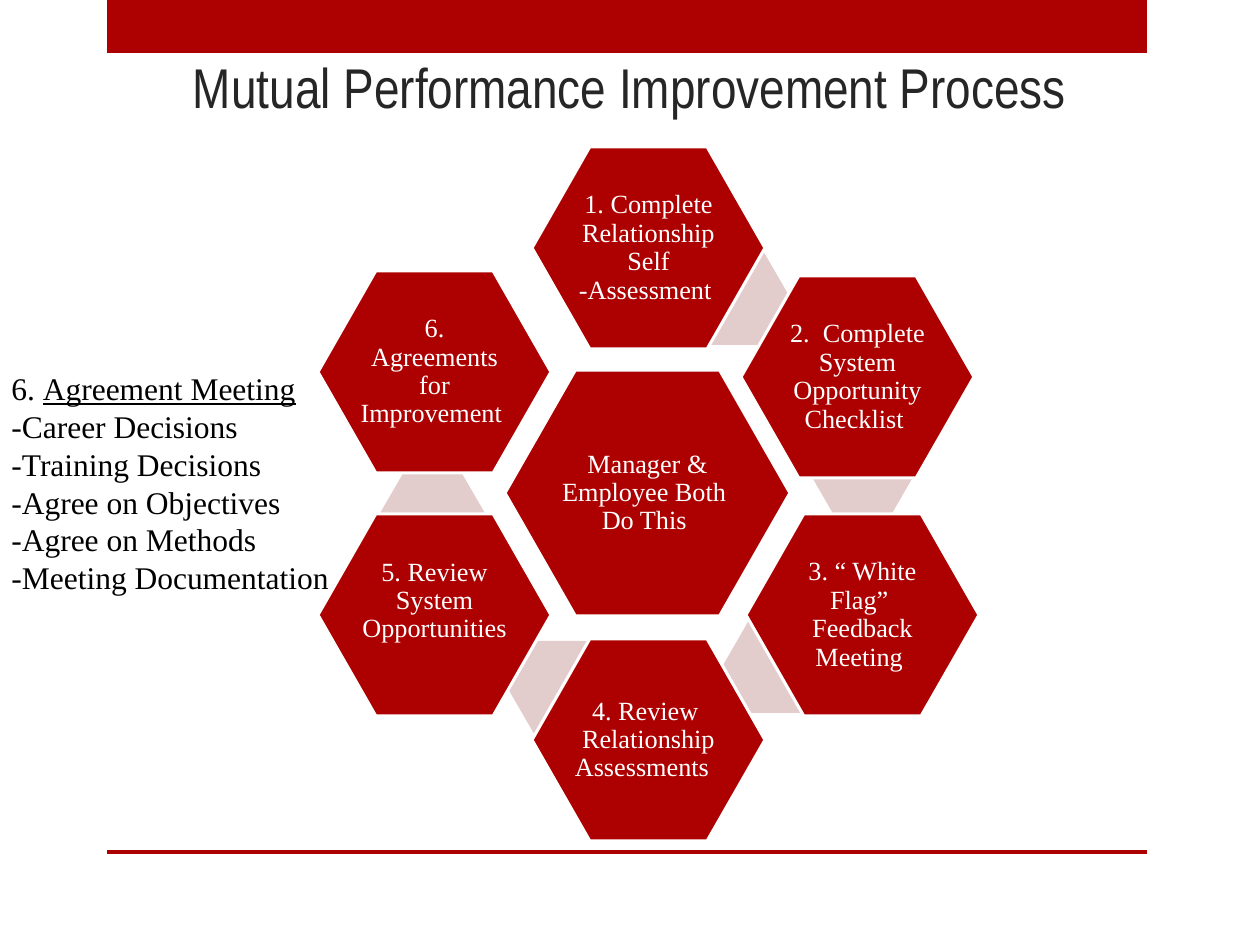
from dataclasses import dataclass
from typing import Optional

from pptx import Presentation
from pptx.dml.color import RGBColor
from pptx.enum.shapes import MSO_SHAPE
from pptx.enum.text import MSO_ANCHOR, MSO_AUTO_SIZE, PP_ALIGN
from pptx.util import Emu, Pt

PX = 914400 // 126  # EMU per px


@dataclass(frozen=True)
class Theme:
    red: RGBColor = RGBColor(0xAD, 0x01, 0x01)
    pale: RGBColor = RGBColor(0xE3, 0xCC, 0xCC)
    white: RGBColor = RGBColor(0xFF, 0xFF, 0xFF)
    black: RGBColor = RGBColor(0x00, 0x00, 0x00)
    heading: RGBColor = RGBColor(0x26, 0x26, 0x26)
    title_font: str = "Arial Narrow"
    body_font: str = "Times New Roman"
    title_size: int = 32
    side_size: int = 18
    step_size: int = 15


@dataclass(frozen=True)
class Box:
    x: int
    y: int
    w: int
    h: int

    def emu(self) -> list[Emu]:
        return [Emu(v * PX) for v in (self.x, self.y, self.w, self.h)]

    def inset(self, dx: int, dy: int) -> "Box":
        return Box(self.x + dx, self.y + dy, self.w - 2 * dx, self.h - 2 * dy)


@dataclass(frozen=True)
class Step:
    text: str
    x: int
    y: int
    link: Optional[tuple[int, int]] = None  # corner of the pale hexagon behind
    lift: int = 0  # px the text sits above the middle


THEME = Theme()
STEP_W, STEP_H = 233, 202
LINK_W, LINK_H = 107, 92
LEFT, MIDDLE = 318, 532
LOWER = 514

BARS = [Box(107, 0, 1040, 53), Box(107, 850, 1040, 4)]
CENTRE = Box(505, 370, 285, 246)
STEPS = [
    Step("1. Complete Relationship Self -Assessment ", MIDDLE, 147, (684, 253)),
    Step("2.  Complete System Opportunity Checklist ", 741, 276, (809, 426)),
    Step("3. “ White Flag”  Feedback Meeting ", 746, LOWER, (722, 621)),
    Step("4. Review  Relationship Assessments  ", MIDDLE, 639, (507, 641)),
    Step("5. Review System Opportunities", LEFT, LOWER, (379, 469), 14),
    Step("6. Agreements for Improvement ", LEFT, 271),
]
DECISIONS = [
    "-Career Decisions",
    "-Training Decisions",
    "-Agree on Objectives",
    "-Agree on Methods",
    "-Meeting Documentation",
]


def add_shape(s, kind: MSO_SHAPE, box: Box, fill: RGBColor, outlined: bool = False):
    sp = s.shapes.add_shape(kind, *box.emu())
    sp.shadow.inherit = False
    sp.fill.solid()
    sp.fill.fore_color.rgb = fill
    if outlined:
        sp.line.color.rgb = THEME.white
        sp.line.width = Pt(1.75)
    else:
        sp.line.fill.background()
    return sp


def add_hexagon(s, box: Box, fill: RGBColor, adj: float, outlined: bool) -> None:
    sp = add_shape(s, MSO_SHAPE.HEXAGON, box, fill, outlined)
    sp.adjustments[0] = adj


def style(r, font: str, size: int, color: RGBColor) -> None:
    r.font.name = font
    r.font.size = Pt(size)
    r.font.color.rgb = color


def add_label(s, box: Box, text: str) -> None:
    tf = s.shapes.add_textbox(*box.emu()).text_frame
    tf.word_wrap = True
    tf.vertical_anchor = MSO_ANCHOR.MIDDLE
    tf.margin_left = tf.margin_right = tf.margin_top = tf.margin_bottom = Emu(2 * PX)
    p = tf.paragraphs[0]
    p.text = text
    p.alignment = PP_ALIGN.CENTER
    p.line_spacing = 0.9
    style(p.runs[0], THEME.body_font, THEME.step_size, THEME.white)


def add_step(s, step: Step) -> None:
    if step.link:
        add_hexagon(s, Box(*step.link, LINK_W, LINK_H), THEME.pale, 0.289, False)
    box = Box(step.x, step.y, STEP_W, STEP_H)
    add_hexagon(s, box, THEME.red, 0.286, True)
    label = box.inset(39, 33)
    add_label(s, Box(label.x, label.y - step.lift, label.w, label.h), step.text)


def add_title(s, text: str) -> None:
    tf = s.shapes.add_textbox(*Box(0, 21, 1260, 105).emu()).text_frame
    tf.word_wrap = True
    tf.vertical_anchor = MSO_ANCHOR.BOTTOM
    p = tf.paragraphs[0]
    p.text = text
    p.alignment = PP_ALIGN.CENTER
    style(p.runs[0], THEME.title_font, THEME.title_size, THEME.heading)


def add_decisions(s) -> None:
    tf = s.shapes.add_textbox(*Box(-1, 363, 359, 242).emu()).text_frame
    tf.word_wrap = False
    tf.auto_size = MSO_AUTO_SIZE.SHAPE_TO_FIT_TEXT
    tf.text = "\n".join(["6. ", *DECISIONS])
    r = tf.paragraphs[0].add_run()
    r.text = "Agreement Meeting"
    r.font.underline = True
    for p in tf.paragraphs:
        for r in p.runs:
            style(r, THEME.body_font, THEME.side_size, THEME.black)


def main() -> None:
    prs = Presentation()
    prs.slide_width, prs.slide_height = Emu(1260 * PX), Emu(945 * PX)
    s = prs.slides.add_slide(prs.slide_layouts[6])

    # Frame and title
    for bar in BARS:
        add_shape(s, MSO_SHAPE.RECTANGLE, bar, THEME.red)
    add_title(s, "Mutual Performance Improvement Process")

    # Centre and ring of steps
    add_hexagon(s, CENTRE, THEME.red, 0.286, True)
    add_label(s, CENTRE.inset(48, 41), "Manager & Employee Both  Do This ")
    for step in STEPS:
        add_step(s, step)

    # Notes on the agreement meeting
    add_decisions(s)
    prs.save("out.pptx")


if __name__ == "__main__":
    main()
